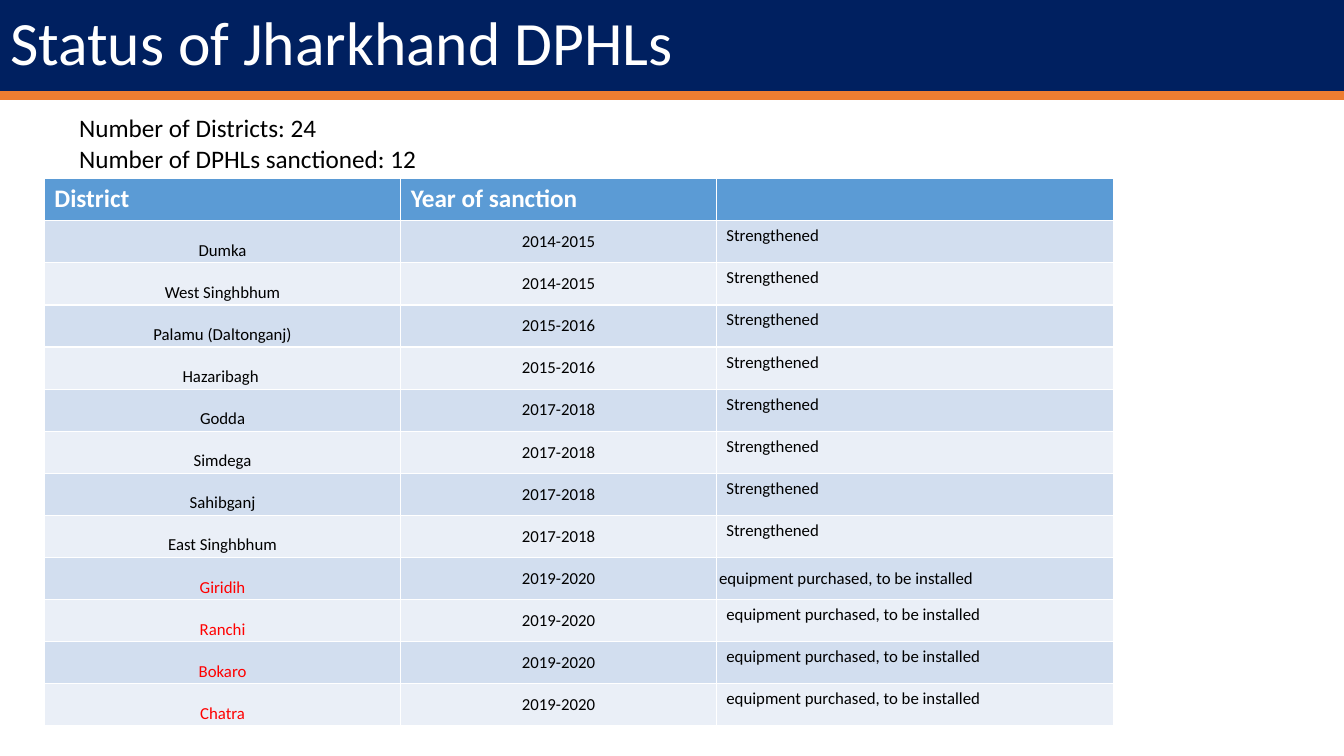
from dataclasses import dataclass

from pptx import Presentation
from pptx.dml.color import RGBColor
from pptx.enum.shapes import MSO_SHAPE
from pptx.enum.text import MSO_ANCHOR, MSO_AUTO_SIZE, PP_ALIGN
from pptx.util import Pt

RECT = MSO_SHAPE.RECTANGLE
TOP, MIDDLE, BOTTOM = MSO_ANCHOR.TOP, MSO_ANCHOR.MIDDLE, MSO_ANCHOR.BOTTOM
LEFT, CENTER = PP_ALIGN.LEFT, PP_ALIGN.CENTER
NO_FIT, GROW = MSO_AUTO_SIZE.NONE, MSO_AUTO_SIZE.SHAPE_TO_FIT_TEXT

TITLE = "Status of Jharkhand DPHLs"
FACTS = ["Number of Districts: 24", "Number of DPHLs sanctioned: 12"]
HEADS = ["District", "Year of sanction", ""]
DONE = "Strengthened"
WAIT = "equipment purchased, to be installed"
LABS = [
    ("Dumka", "2014-2015", DONE),
    ("West Singhbhum", "2014-2015", DONE),
    ("Palamu (Daltonganj)", "2015-2016", DONE),
    ("Hazaribagh ", "2015-2016", DONE),
    ("Godda", "2017-2018", DONE),
    ("Simdega", "2017-2018", DONE),
    ("Sahibganj", "2017-2018", DONE),
    ("East Singhbhum", "2017-2018", DONE),
    ("Giridih", "2019-2020", WAIT),
    ("Ranchi", "2019-2020", WAIT),
    ("Bokaro", "2019-2020", WAIT),
    ("Chatra", "2019-2020", WAIT),
]
TIGHT = "Giridih"


@dataclass(frozen=True)
class Theme:
    font: str = "Calibri"
    navy: str = "002060"
    orange: str = "ED7D31"
    blue: str = "5B9BD5"
    bands: tuple = ("D2DEEF", "EAEFF7")
    white: str = "FFFFFF"
    black: str = "000000"
    red: str = "FF0000"
    big: int = 44
    mid: int = 18
    small: int = 12


LOOK = Theme()
WIDE, HIGH = 960, 540
TITLE_H, BAR_H = 65.5, 5.2
TABLE_X, TABLE_Y, ROW_H = 31.7, 127.6, 30.08
COLS = [254.6, 225.4, 283.7]


def paint(item, color):
    item.fill.solid()
    item.fill.fore_color.rgb = RGBColor.from_string(color)


def style(frame, size, color, bold=False, align=LEFT):
    for para in frame.paragraphs:
        para.alignment = align
        for font in [para.font] + [run.font for run in para.runs]:
            font.name, font.size, font.bold = LOOK.font, Pt(size), bold
            font.color.rgb = RGBColor.from_string(color)


def add_bar(slide):
    bar = slide.shapes.add_shape(RECT, 0, Pt(TITLE_H), Pt(WIDE), Pt(BAR_H))
    bar.shadow.inherit = False
    paint(bar, LOOK.orange)
    bar.line.color.rgb = RGBColor.from_string(LOOK.orange)
    bar.line.width = Pt(1)


def add_title(slide):
    title = slide.shapes.title
    title.left, title.top, title.width, title.height = 0, 0, Pt(WIDE), Pt(TITLE_H)
    paint(title, LOOK.navy)
    frame = title.text_frame
    frame.text = TITLE
    frame.auto_size, frame.vertical_anchor = NO_FIT, MIDDLE
    frame.paragraphs[0].line_spacing = 0.9
    style(frame, LOOK.big, LOOK.white)


def add_facts(slide):
    box = slide.shapes.add_textbox(Pt(49.4), Pt(77), Pt(486), Pt(50.9))
    frame = box.text_frame
    frame.word_wrap, frame.auto_size = True, GROW
    frame.text = "\n".join(FACTS)
    style(frame, LOOK.mid, LOOK.black)


def fill_lab(cell, row, col, lab):
    color = LOOK.red if col == 0 and lab[2] == WAIT else LOOK.black
    align = CENTER if col < 2 else LEFT
    style(cell.text_frame, LOOK.small, color, align=align)
    paint(cell, LOOK.bands[(row - 1) % 2])
    if col < 2 or lab[0] == TIGHT:
        cell.margin_left = cell.margin_right = Pt(2)
        cell.margin_top = cell.margin_bottom = Pt(1.5)
        cell.vertical_anchor = BOTTOM if col == 0 else MIDDLE
    else:
        cell.vertical_anchor = TOP


def add_labs(slide):
    rows = [HEADS] + LABS
    table = slide.shapes.add_table(
        len(rows), len(COLS), Pt(TABLE_X), Pt(TABLE_Y),
        Pt(sum(COLS)), Pt(ROW_H * len(rows)),
    ).table
    for col, width in enumerate(COLS):
        table.columns[col].width = Pt(width)
    for row, texts in enumerate(rows):
        table.rows[row].height = Pt(ROW_H)
        for col, text in enumerate(texts):
            cell = table.cell(row, col)
            cell.text_frame.text = text
            if row:
                fill_lab(cell, row, col, texts)
            else:
                style(cell.text_frame, LOOK.mid, LOOK.white, bold=True)
                paint(cell, LOOK.blue)


def main():
    deck = Presentation()
    deck.slide_width, deck.slide_height = Pt(WIDE), Pt(HIGH)
    slide = deck.slides.add_slide(deck.slide_layouts[5])
    add_bar(slide)
    add_title(slide)
    add_labs(slide)
    add_facts(slide)
    deck.save("out.pptx")


if __name__ == "__main__":
    main()
